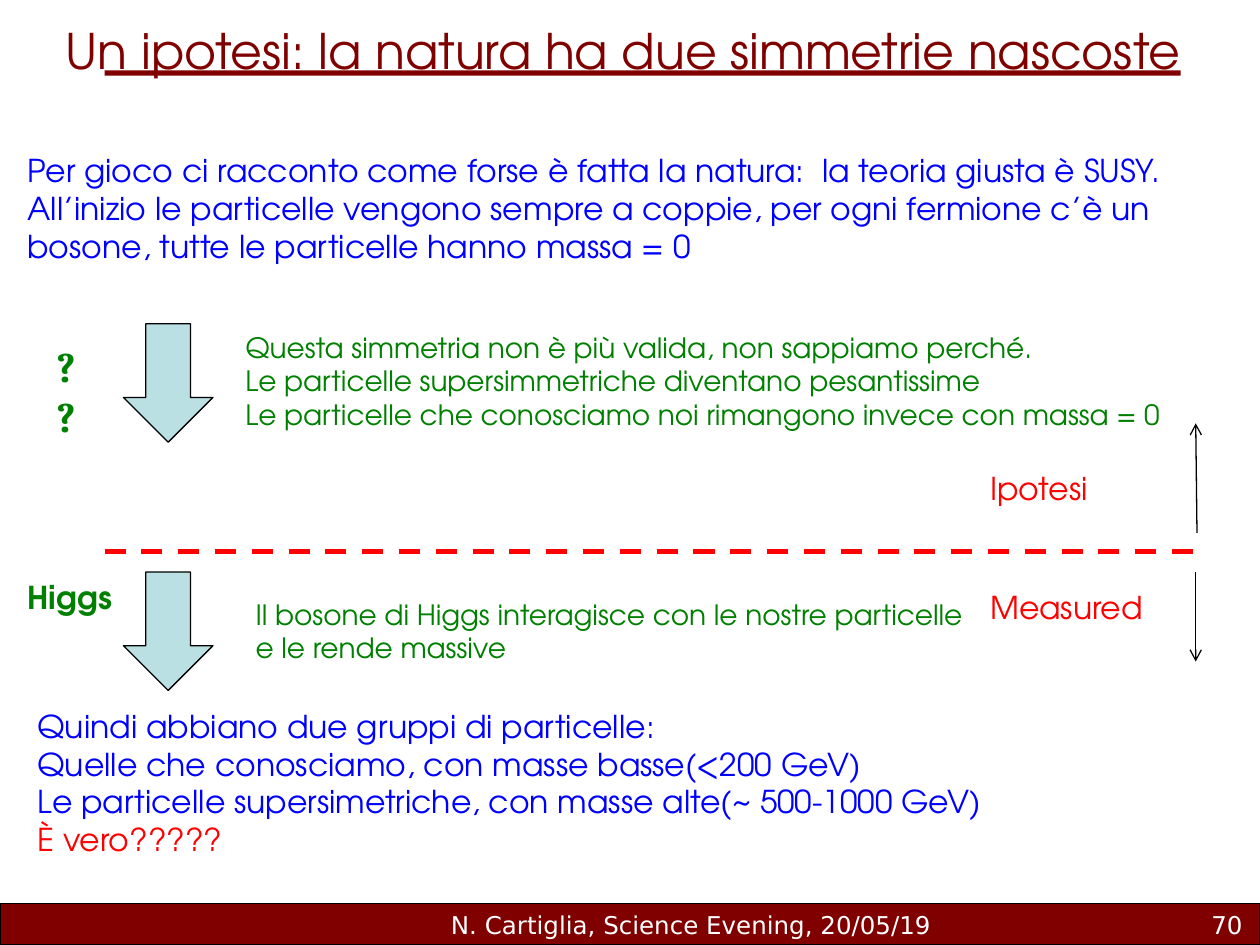
from dataclasses import dataclass

from lxml.etree import SubElement
from pptx import Presentation
from pptx.dml.color import RGBColor
from pptx.enum.dml import MSO_LINE
from pptx.enum.shapes import MSO_CONNECTOR, MSO_SHAPE
from pptx.enum.text import MSO_AUTO_SIZE, PP_ALIGN
from pptx.oxml.ns import qn
from pptx.util import Inches, Pt


@dataclass(frozen=True)
class Theme:
    maroon: str = "800000"
    blue: str = "0000FF"
    green: str = "008000"
    red: str = "FF0000"
    pale: str = "BBE0E3"
    black: str = "000000"
    white: str = "FFFFFF"
    body_font: str = "TeX Gyre Adventor"
    footer_font: str = "DejaVu Sans"
    mark_font: str = "Cambria"
    title_size: int = 28
    mark_size: int = 24
    body_size: int = 18
    detail_size: int = 16
    footer_size: int = 14
    hairline: float = 0.75
    divider: float = 3


class SlideBuilder:
    def __init__(self, slide, theme):
        self.slide = slide
        self.theme = theme

    def text(self, box, lines, color, size=None, font=None, bold=False,
             align=PP_ALIGN.LEFT, wrap=True, grow=True):
        frame = self.slide.shapes.add_textbox(*map(Inches, box)).text_frame
        frame.word_wrap = wrap
        frame.auto_size = MSO_AUTO_SIZE.SHAPE_TO_FIT_TEXT if grow else MSO_AUTO_SIZE.NONE
        style = {
            "name": font or self.theme.body_font,
            "size": Pt(size or self.theme.body_size),
            "bold": bold,
        }
        for index, line in enumerate(lines):
            paragraph = frame.add_paragraph() if index else frame.paragraphs[0]
            paragraph.alignment = align
            words, line_color = line if isinstance(line, tuple) else (line, color)
            run = paragraph.add_run()
            run.text = words
            for name, value in style.items():
                setattr(run.font, name, value)
            run.font.color.rgb = RGBColor.from_string(line_color)

    def shape(self, kind, box, fill, outlined=True):
        shape = self.slide.shapes.add_shape(kind, *map(Inches, box))
        shape.shadow.inherit = False
        shape.fill.solid()
        shape.fill.fore_color.rgb = RGBColor.from_string(fill)
        if outlined:
            shape.line.color.rgb = RGBColor.from_string(self.theme.black)
            shape.line.width = Pt(self.theme.hairline)
        else:
            shape.line.fill.background()

    def line(self, ends, color, width, dash=None, arrow=False):
        connector = self.slide.shapes.add_connector(
            MSO_CONNECTOR.STRAIGHT, *map(Inches, ends))
        connector.line.color.rgb = RGBColor.from_string(color)
        for name, value in {"width": Pt(width), "dash_style": dash}.items():
            setattr(connector.line, name, value)
        properties = connector._element.spPr
        if arrow:
            SubElement(properties.find(qn("a:ln")), qn("a:tailEnd"), type="arrow")
        SubElement(properties, qn("a:effectLst"))


def main():
    deck = Presentation()
    deck.slide_width, deck.slide_height = Inches(10), Inches(7.5)
    theme = Theme()
    page = SlideBuilder(deck.slides.add_slide(deck.slide_layouts[6]), theme)

    page.shape(MSO_SHAPE.RECTANGLE, (0, 7.17, 10, 0.33), theme.maroon)
    page.shape(MSO_SHAPE.RECTANGLE, (0.83, 0.56, 8.54, 0.04), theme.maroon, outlined=False)
    footer = {"color": theme.white, "size": theme.footer_size,
              "font": theme.footer_font, "grow": False}
    page.text((3.43, 7.17, 4.11, 0.33), ["N. Cartiglia, Science Evening, 20/05/19"],
              align=PP_ALIGN.CENTER, **footer)
    page.text((7.88, 7.17, 2.08, 0.33), ["70"], align=PP_ALIGN.RIGHT, **footer)

    page.text((0.2, 0.11, 9.49, 0.57), ["Un ipotesi: la natura ha due simmetrie nascoste"],
              theme.maroon, theme.title_size, align=PP_ALIGN.CENTER)
    page.text((0.12, 1.15, 9.67, 1.01), [
        "Per gioco ci racconto come forse è fatta la natura:  la teoria giusta è SUSY.",
        "All’inizio le particelle vengono sempre a coppie, per ogni fermione c’è un bosone, "
        "tutte le particelle hanno massa = 0",
    ], theme.blue)

    for step_top in (2.57, 4.54):
        page.shape(MSO_SHAPE.DOWN_ARROW, (0.98, step_top, 0.71, 0.94), theme.pale)
    page.text((1.85, 2.57, 7.8, 0.91), [
        "Questa simmetria non è più valida, non sappiamo perché.",
        "Le particelle supersimmetriche diventano pesantissime",
        "Le particelle che conosciamo noi rimangono invece con massa = 0",
    ], theme.green, theme.detail_size)
    page.text((1.93, 4.69, 5.98, 0.64), [
        "Il bosone di Higgs interagisce con le nostre particelle e le rende massive",
    ], theme.green, theme.detail_size)
    page.text((0.2, 5.56, 9.8, 1.31), [
        "Quindi abbiano due gruppi di particelle:",
        "Quelle che conosciamo, con masse basse(<200 GeV)",
        "Le particelle supersimetriche, con masse alte(~ 500-1000 GeV)",
        ("È vero?????", theme.red),
    ], theme.blue)
    page.text((0.35, 2.65, 0.45, 0.4), ["??"], theme.green, theme.mark_size,
              theme.mark_font, bold=True)
    page.text((0.12, 4.54, 0.88, 0.4), ["Higgs"], theme.green, bold=True, wrap=False)

    page.line((0.83, 4.38, 9.57, 4.38), theme.red, theme.divider, dash=MSO_LINE.DASH)
    for direction in ((9.49, 4.54, 9.49, 5.25), (9.5, 4.23, 9.49, 3.36)):
        page.line(direction, theme.black, theme.hairline, arrow=True)
    page.text((7.76, 4.62, 1.43, 0.4), ["Measured"], theme.red, wrap=False)
    page.text((7.76, 3.67, 0.99, 0.4), ["Ipotesi"], theme.red, wrap=False)

    deck.save("out.pptx")


if __name__ == "__main__":
    main()
